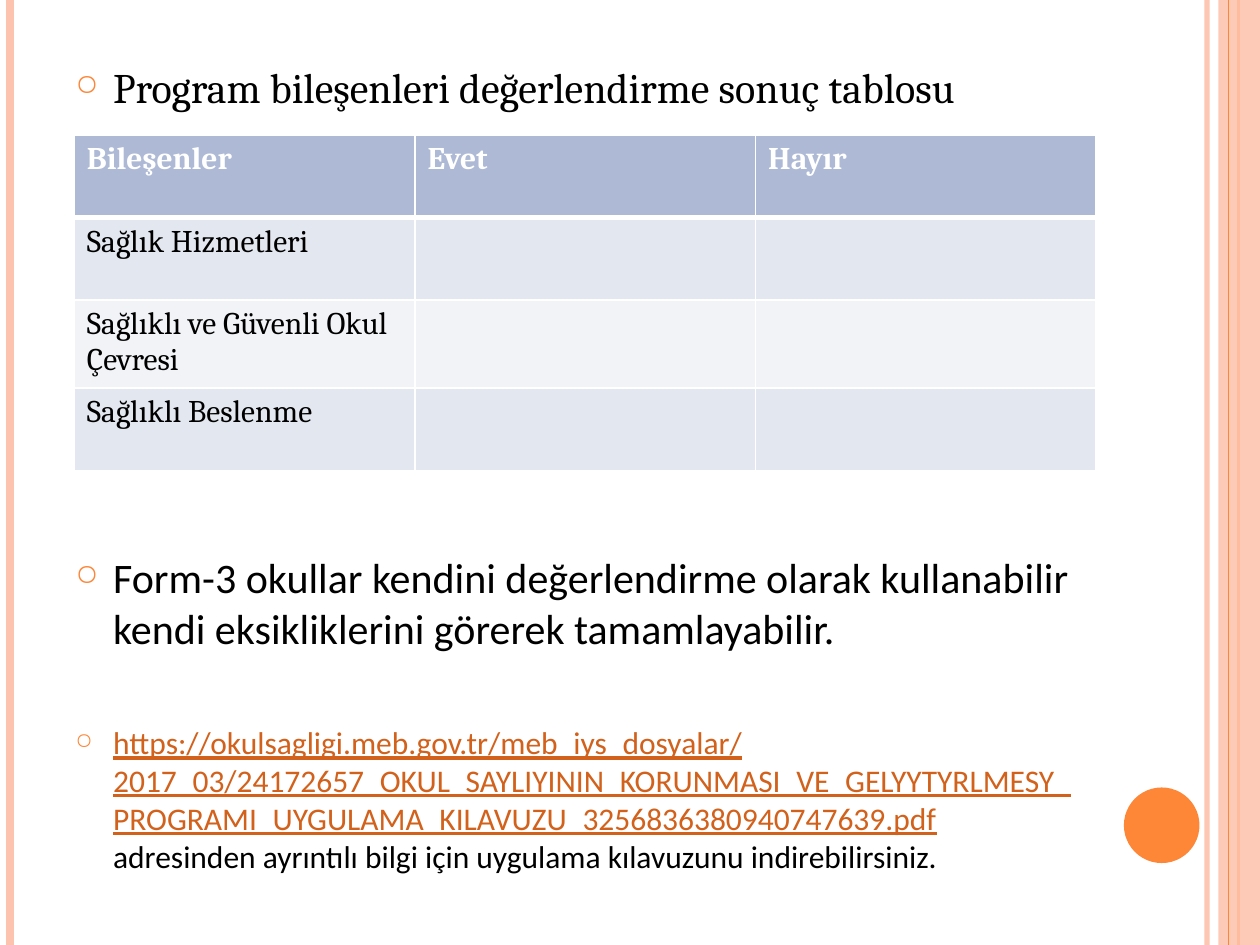
from dataclasses import dataclass

from lxml.etree import SubElement
from pptx import Presentation
from pptx.dml.color import RGBColor
from pptx.enum.shapes import MSO_CONNECTOR as Connector, MSO_SHAPE as Shape
from pptx.oxml.ns import qn
from pptx.util import Inches, Pt

COLUMNS, ROWS = 100, 75
CELL = Inches(10) // COLUMNS


@dataclass(frozen=True)
class Theme:
    orange: str = "FE8637"
    peach: str = "FEC3AE"
    ink: str = "000000"
    white: str = "FFFFFF"
    link: str = "D2611C"
    header: str = "AEBAD5"
    odd_row: str = "E3E7EF"
    even_row: str = "F2F3F7"
    serif: str = "Cambria"
    sans: str = "Calibri"
    large: int = 24
    small: int = 18


@dataclass(frozen=True)
class Box:
    left: float
    top: float
    width: float
    height: float

    def lengths(self):
        return [round(value * CELL) for value in (self.left, self.top, self.width, self.height)]


THEME = Theme()
HEADING = "Program bileşenleri değerlendirme sonuç tablosu"
ADVICE = ("Form-3 okullar kendini değerlendirme olarak kullanabilir "
          "kendi eksikliklerini görerek tamamlayabilir.")
ADDRESS = ("https://okulsagligi.meb.gov.tr/meb_iys_dosyalar/2017_03/24172657_"
           "OKUL_SAYLIYININ_KORUNMASI_VE_GELYYTYRLMESY_PROGRAMI_UYGULAMA_"
           "KILAVUZU_3256836380940747639.pdf")
INVITATION = "adresinden ayrıntılı bilgi için uygulama kılavuzunu indirebilirsiniz."
TABLE = [
    ["Bileşenler", "Evet", "Hayır"],
    ["Sağlık Hizmetleri", "", ""],
    ["Sağlıklı ve Güvenli Okul Çevresi", "", ""],
    ["Sağlıklı Beslenme", "", ""],
]


def rgb(color):
    return RGBColor.from_string(color)


def set_alpha(shape, percent):
    color = next(shape._element.spPr.iter(qn("a:srgbClr")))
    SubElement(color, qn("a:alpha"), val=str(percent * 1000))


def add_stripe(page, box, offset, color, weight, alpha=100):
    left, top, _, height = box.lengths()
    x = left + round(offset * CELL)
    stripe = page.shapes.add_connector(Connector.STRAIGHT, x, top, x, top + height)
    stripe.line.color.rgb = rgb(color)
    stripe.line.width = Pt(weight)
    if alpha < 100:
        set_alpha(stripe, alpha)
    SubElement(stripe._element.spPr, qn("a:effectLst"))


def add_filled(page, box, kind, color):
    shape = page.shapes.add_shape(kind, *box.lengths())
    shape.shadow.inherit = False
    shape.fill.solid()
    shape.fill.fore_color.rgb = rgb(color)
    shape.line.fill.background()
    return shape


def add_frame(page, box):
    add_stripe(page, box, 95.8, THEME.peach, 3, 93)
    add_stripe(page, box, 0.8, THEME.peach, 4.5)
    add_stripe(page, box, 98.3, THEME.orange, 1.5)
    band = add_filled(page, Box(box.left + 96.7, box.top, 3.3, box.height),
                      Shape.RECTANGLE, THEME.peach)
    set_alpha(band, 87)
    add_stripe(page, box, 97.5, THEME.orange, 0.75)
    add_filled(page, Box(box.left + 89.2, box.top + 62.5, 6, 6), Shape.OVAL, THEME.orange)


def add_bullet(page, box, font, size):
    frame = page.shapes.add_textbox(*box.lengths()).text_frame
    frame.word_wrap = True
    para = frame.paragraphs[0]
    para.font.name = font
    para.font.size = Pt(size)
    para.font.color.rgb = rgb(THEME.ink)
    props = para._p.get_or_add_pPr()
    props.set("marL", str(3 * CELL))
    props.set("indent", str(-3 * CELL))
    marks = [SubElement(props, qn(tag)) for tag in ("a:buClr", "a:buSzPct", "a:buChar")]
    SubElement(marks[0], qn("a:srgbClr"), val=THEME.orange)
    marks[1].set("val", "70000")
    marks[2].set("char", "○")
    props.append(props.find(qn("a:defRPr")))
    return para


def add_span(para, text, color=THEME.ink, underline=False):
    span = para.add_run()
    span.text = text
    font = span.font
    font.name, font.size = para.font.name, para.font.size
    font.color.rgb = rgb(color)
    font.underline = underline


def add_heading(page, box):
    add_span(add_bullet(page, box, THEME.serif, THEME.large), HEADING)


def add_advice(page, box):
    add_span(add_bullet(page, box, THEME.sans, THEME.large), ADVICE)


def add_source(page, box):
    para = add_bullet(page, box, THEME.sans, THEME.small)
    add_span(para, ADDRESS, THEME.link, True)
    para.add_line_break()
    add_span(para, INVITATION)


def set_borders(cell, bottom):
    props = cell._tc.get_or_add_tcPr()
    for index, side in enumerate(("L", "R", "T", "B")):
        weight = bottom if side == "B" else 1
        line = props.makeelement(qn(f"a:ln{side}"), {"w": str(Pt(weight))})
        fill = SubElement(line, qn("a:solidFill"))
        SubElement(fill, qn("a:srgbClr"), val=THEME.white)
        props.insert(index, line)


def add_results(page, box):
    table = page.shapes.add_table(len(TABLE), len(TABLE[0]), *box.lengths()).table
    for row, texts in enumerate(TABLE):
        is_header = row == 0
        shade = THEME.header if is_header else (THEME.even_row, THEME.odd_row)[row % 2]
        for column, text in enumerate(texts):
            cell = table.cell(row, column)
            cell.text = text
            cell.fill.solid()
            cell.fill.fore_color.rgb = rgb(shade)
            set_borders(cell, 3 if is_header else 1)
            font = cell.text_frame.paragraphs[0].font
            font.name, font.size, font.bold = THEME.serif, Pt(THEME.small), is_header
            font.color.rgb = rgb(THEME.white if is_header else THEME.ink)


def main():
    deck = Presentation()
    deck.slide_width, deck.slide_height = COLUMNS * CELL, ROWS * CELL
    page = deck.slides.add_slide(deck.slide_layouts[6])
    add_frame(page, Box(0, 0, COLUMNS, ROWS))
    add_heading(page, Box(5, 4.4, 81.7, 5.5))
    add_advice(page, Box(5, 43.3, 81.7, 9.2))
    add_source(page, Box(5, 56.9, 81.7, 13.2))
    add_results(page, Box(5.9, 10.7, 81.1, 26.2))
    deck.save("out.pptx")


if __name__ == "__main__":
    main()
